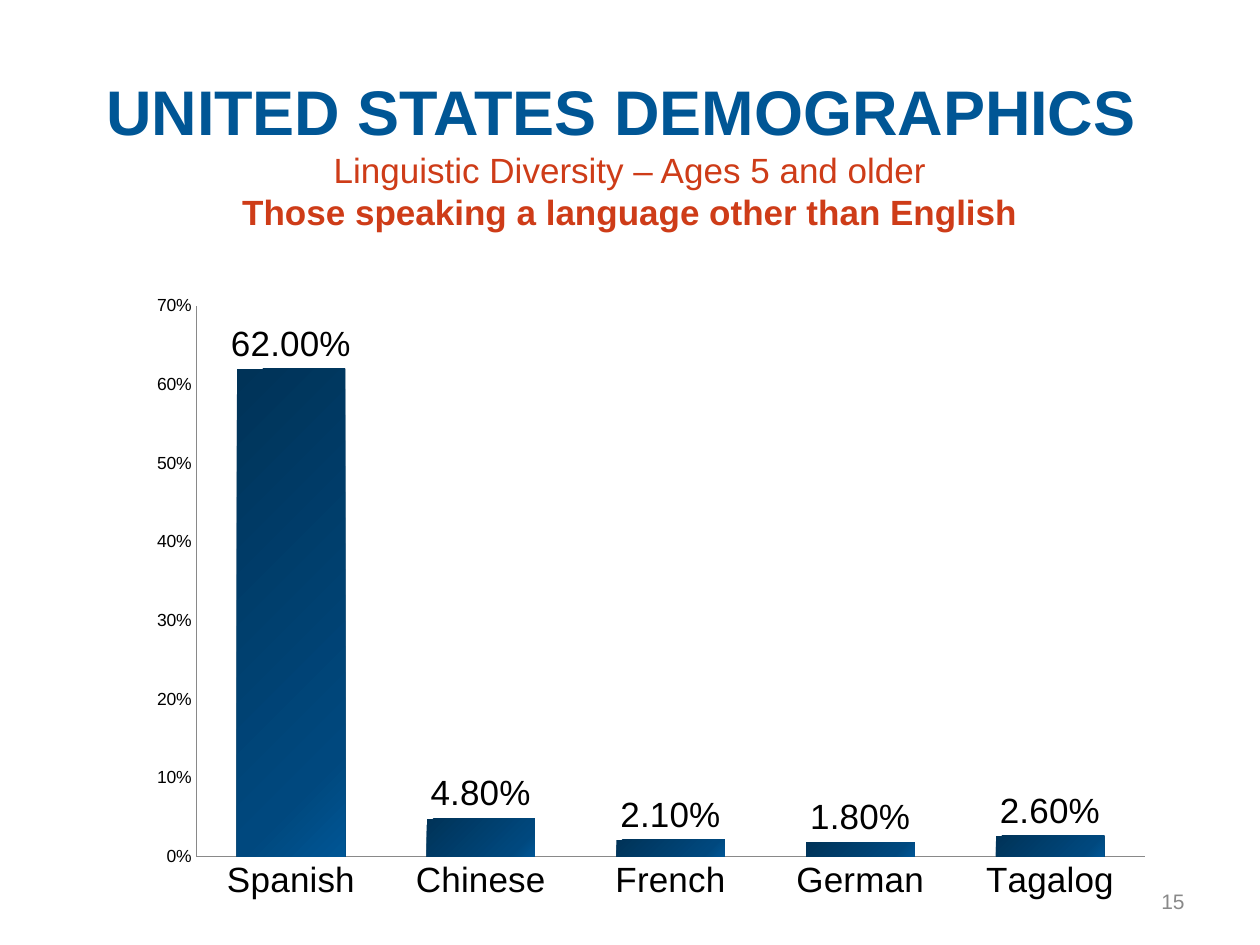
"""Build the United States demographics slide with its language chart."""
from copy import deepcopy

from pptx import Presentation
from pptx.chart.data import CategoryChartData
from pptx.dml.color import RGBColor
from pptx.enum.chart import XL_CHART_TYPE, XL_LABEL_POSITION, XL_TICK_MARK
from pptx.enum.text import MSO_ANCHOR, PP_ALIGN
from pptx.util import Pt

COLUMNS = XL_CHART_TYPE.COLUMN_CLUSTERED
OUTSIDE_END = XL_LABEL_POSITION.OUTSIDE_END
NO_TICK = XL_TICK_MARK.NONE
MIDDLE = MSO_ANCHOR.MIDDLE
CENTER, RIGHT = PP_ALIGN.CENTER, PP_ALIGN.RIGHT

FONT = "Arial"
COLORS = {
    "blue": "005695",
    "medium_blue": "00487E",
    "dark_blue": "003358",
    "red": "CE3C18",
    "gray": "898989",
    "black": "000000",
}
TITLE_LINES = [
    ("UNITED STATES DEMOGRAPHICS ", 36, "blue", True),
    ("Linguistic Diversity – Ages 5 and older", 20, "red", False),
    ("Those speaking a language other than English", 20, "red", True),
]
LANGUAGE_SHARES = {
    "Spanish": 0.62,
    "Chinese": 0.048,
    "French": 0.021,
    "German": 0.018,
    "Tagalog": 0.026,
}
GRADIENT_STOPS = [(0, "dark_blue"), (0.82, "medium_blue"), (1, "blue")]


def rgb(name):
    return RGBColor.from_string(COLORS[name])


def format_font(font, size, color, bold=False):
    font.name = FONT
    font.size = Pt(size)
    font.bold = bold
    font.color.rgb = rgb(color)


def fill_title(slide):
    title = slide.shapes.title
    title.left, title.top = Pt(0), Pt(42)
    title.width, title.height = Pt(720), Pt(90)
    text_frame = title.text_frame
    text_frame.vertical_anchor = MIDDLE
    text_frame.text = "\n".join(line[0] for line in TITLE_LINES)
    for paragraph, (_, size, color, bold) in zip(text_frame.paragraphs, TITLE_LINES):
        paragraph.alignment = CENTER
        format_font(paragraph.runs[0].font, size, color, bold)


def add_page_number(slide, number):
    box = slide.shapes.add_textbox(Pt(516), Pt(500.5), Pt(168), Pt(28.75))
    text_frame = box.text_frame
    text_frame.word_wrap = True
    text_frame.vertical_anchor = MIDDLE
    text_frame.text = number
    paragraph = text_frame.paragraphs[0]
    paragraph.alignment = RIGHT
    format_font(paragraph.runs[0].font, 12, "gray")


def fill_with_gradient(series):
    fill = series.format.fill
    fill.gradient()
    fill.gradient_angle = 315
    stop_list = series._element.xpath(".//a:gsLst")[0]
    stop_list.insert(1, deepcopy(stop_list[0]))
    for stop, (position, color) in zip(fill.gradient_stops, GRADIENT_STOPS):
        stop.position = position
        stop.color.rgb = rgb(color)


def format_axis(axis, size):
    axis.major_tick_mark = axis.minor_tick_mark = NO_TICK
    axis.has_major_gridlines = False
    axis.format.line.color.rgb = rgb("gray")
    axis.format.line.width = Pt(0.75)
    format_font(axis.tick_labels.font, size, "black")


def format_value_axis(axis):
    format_axis(axis, 10)
    axis.minimum_scale, axis.maximum_scale = 0, 0.7
    axis.major_unit = 0.1
    axis.tick_labels.number_format = "0%"
    axis.tick_labels.number_format_is_linked = False


def format_data_labels(plot):
    plot.has_data_labels = True
    labels = plot.data_labels
    labels.show_value = True
    labels.position = OUTSIDE_END
    labels.number_format = "0.00%"
    labels.number_format_is_linked = False
    format_font(labels.font, 20, "black")


def add_language_chart(slide):
    data = CategoryChartData(number_format="0.00%")
    data.categories = list(LANGUAGE_SHARES)
    data.add_series("Series 1", list(LANGUAGE_SHARES.values()))
    frame = slide.shapes.add_chart(COLUMNS, Pt(78), Pt(162), Pt(588), Pt(360), data)
    chart = frame.chart
    chart.has_title = False
    chart.has_legend = False
    format_font(chart.font, 10, "black")
    format_axis(chart.category_axis, 20)
    format_value_axis(chart.value_axis)
    plot = chart.plots[0]
    plot.gap_width = 75
    plot.vary_by_categories = False
    format_data_labels(plot)
    fill_with_gradient(plot.series[0])


def main():
    presentation = Presentation()
    presentation.slide_width, presentation.slide_height = Pt(720), Pt(540)
    slide = presentation.slides.add_slide(presentation.slide_layouts[5])
    fill_title(slide)
    add_page_number(slide, "15")
    add_language_chart(slide)
    presentation.save("out.pptx")


if __name__ == "__main__":
    main()
